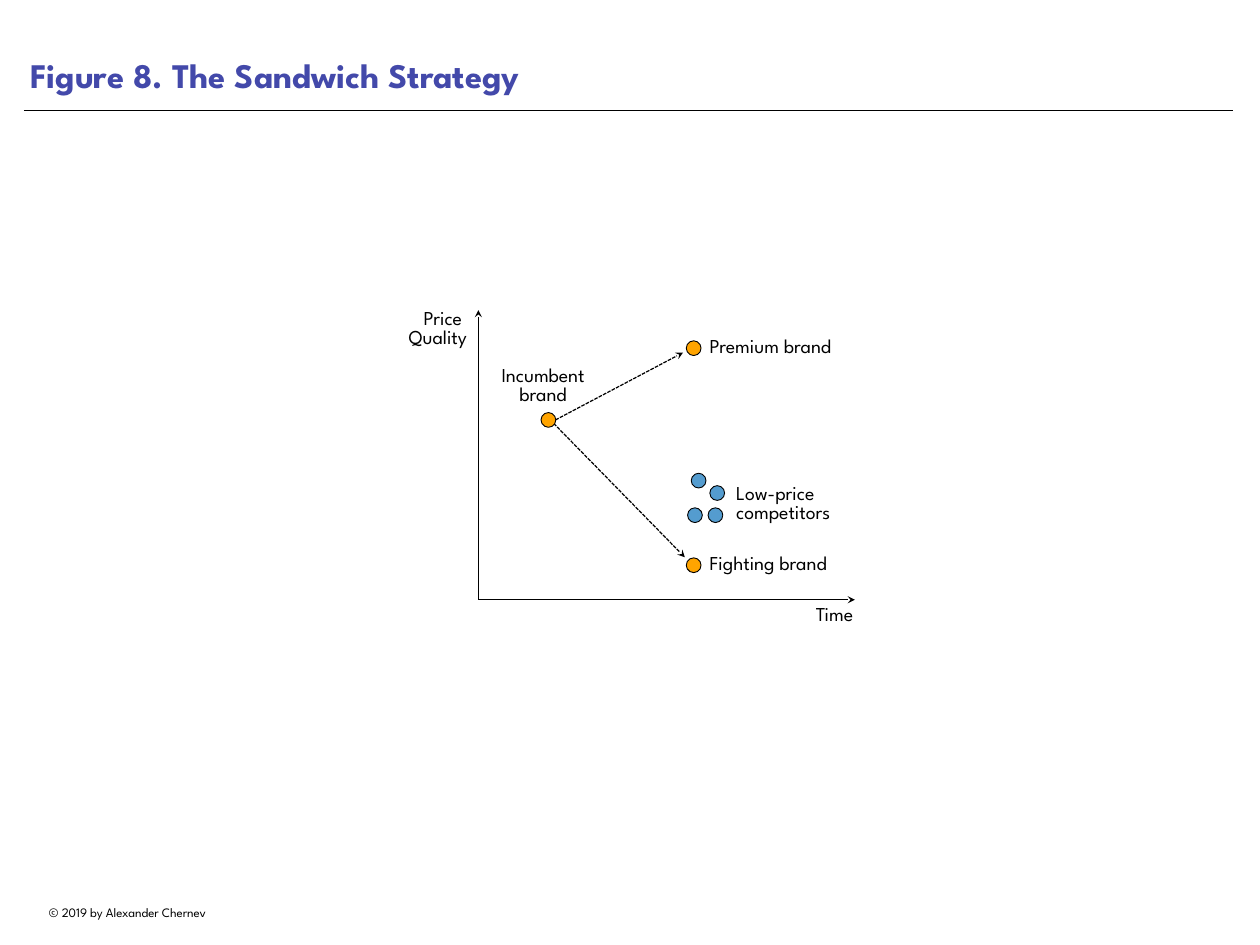
from pptx import Presentation
from pptx.dml.color import RGBColor
from pptx.enum.dml import MSO_LINE as Dash
from pptx.enum.shapes import MSO_CONNECTOR as Link, MSO_SHAPE as Form
from pptx.enum.text import MSO_ANCHOR as Anchor, MSO_AUTO_SIZE as Fit, PP_ALIGN as Align
from pptx.oxml.ns import qn
from pptx.util import Inches, Pt
from lxml.etree import SubElement as add_sub

BLACK = RGBColor(0x00, 0x00, 0x00)
VIOLET = RGBColor(0x43, 0x49, 0xAA)
ORANGE = RGBColor(0xFF, 0xA4, 0x00)
BLUE = RGBColor(0x54, 0x9C, 0xCF)
FONT = "League Spartan"

# Grid: 128 columns by 96 rows over the slide
WIDE, HIGH = Inches(14.22), Inches(10.67)
COLS, ROWS = 128, 96
DOT = 1.5

# Content, in columns and rows
TITLE = "Figure 8. The Sandwich Strategy"
TITLE_BOX = (2.43, 0, 122.76, 10.35)
CREDIT = "© 2019 by Alexander Chernev"
CREDIT_BOX = (2.43, 91.44, 21.06, 2.52)
RULE = ((2.43, 11.16), (125.28, 11.16))
ORIGIN, TOP, END = (48.6, 60.93), (48.6, 31.5), (86.85, 60.93)
MOVES = [
    ((56.43, 42.66), (69.39, 35.82)),
    ((56.25, 43.02), (69.57, 56.61)),
]
DOTS = {
    BLUE: [(70.97, 48.83), (72.86, 50.09), (70.6, 52.34), (72.68, 52.34)],
    ORANGE: [(55.71, 42.66), (70.47, 57.42), (70.47, 35.37)],
}
LABELS = [  # lines, box, alignment, anchor
    (["Time"], (80.19, 61.65, 6.48, 3.69), Align.RIGHT, Anchor.TOP),
    (["Price ", "Quality"], (39.69, 31.5, 7.74, 6.03), Align.RIGHT, Anchor.TOP),
    (["Incumbent brand"], (48.6, 36.27, 13.14, 6.03), Align.CENTER, Anchor.MIDDLE),
    (["Fighting brand"], (72.09, 55.8, 15.12, 3.24), Align.LEFT, Anchor.MIDDLE),
    (["Low-price competitors"], (74.79, 48.87, 13.14, 4.68), Align.LEFT, Anchor.MIDDLE),
    (["Premium brand"], (72.09, 33.48, 15.12, 3.69), Align.LEFT, Anchor.MIDDLE),
]


def place(*cells):
    """Turn column, row pairs into slide lengths."""
    units = (WIDE / COLS, HIGH / ROWS)
    return [round(cell * units[i % 2]) for i, cell in enumerate(cells)]


def style(item, **values):
    for name, value in values.items():
        setattr(item, name, value)


def write(shape, lines, size, color=BLACK, bold=False, align=Align.LEFT,
          space=None, inset=None, **frame):
    body = shape.text_frame
    style(body, **frame)
    if inset is not None:
        for side in ("left", "top", "right", "bottom"):
            setattr(body, "margin_" + side, inset)
    body.text = "\n".join(lines)
    for para in body.paragraphs:
        style(para, alignment=align, line_spacing=space)
        for run in para.runs:
            style(run.font, name=FONT, size=Pt(size), bold=bold)
            run.font.color.rgb = color


def draw_line(shapes, start, stop, width=1, arrow=True, dash=None):
    link = shapes.add_connector(Link.STRAIGHT, *place(*start, *stop))
    link.line.color.rgb = BLACK
    style(link.line, width=Pt(width), dash_style=dash)
    if arrow:
        add_sub(link.line._get_or_add_ln(), qn("a:tailEnd"), type="stealth")
    add_sub(link._element.spPr, qn("a:effectLst"))


def draw_dot(shapes, x, y, color):
    box = place(x - DOT / 2, y - DOT / 2, DOT, DOT)
    dot = shapes.add_shape(Form.OVAL, *box)
    dot.shadow.inherit = False
    dot.fill.solid()
    dot.fill.fore_color.rgb = color
    dot.line.color.rgb = BLACK
    dot.line.width = Pt(0.75)


def main():
    deck = Presentation()
    style(deck, slide_width=WIDE, slide_height=HIGH)
    shapes = deck.slides.add_slide(deck.slide_layouts[5]).shapes

    # Title, rule and credit
    head = shapes.title
    style(head, **dict(zip(("left", "top", "width", "height"), place(*TITLE_BOX))))
    write(head, [TITLE], 28, VIOLET, True, inset=Inches(0.07),
          vertical_anchor=Anchor.BOTTOM, auto_size=Fit.NONE)
    draw_line(shapes, *RULE, width=0.5, arrow=False)
    write(shapes.add_textbox(*place(*CREDIT_BOX)), [CREDIT], 10.5,
          align=Align.CENTER, word_wrap=False, auto_size=Fit.SHAPE_TO_FIT_TEXT)

    # Axes and labels
    for tip in (TOP, END):
        draw_line(shapes, ORIGIN, tip)
    for lines, box, align, anchor in LABELS:
        write(shapes.add_textbox(*place(*box)), lines, 16, align=align, space=0.8,
              inset=0, word_wrap=True, vertical_anchor=anchor)

    # Moves and brands
    for start, stop in MOVES:
        draw_line(shapes, start, stop, dash=Dash.SQUARE_DOT)
    for color, spots in DOTS.items():
        for x, y in spots:
            draw_dot(shapes, x, y, color)

    deck.save("out.pptx")


if __name__ == "__main__":
    main()
